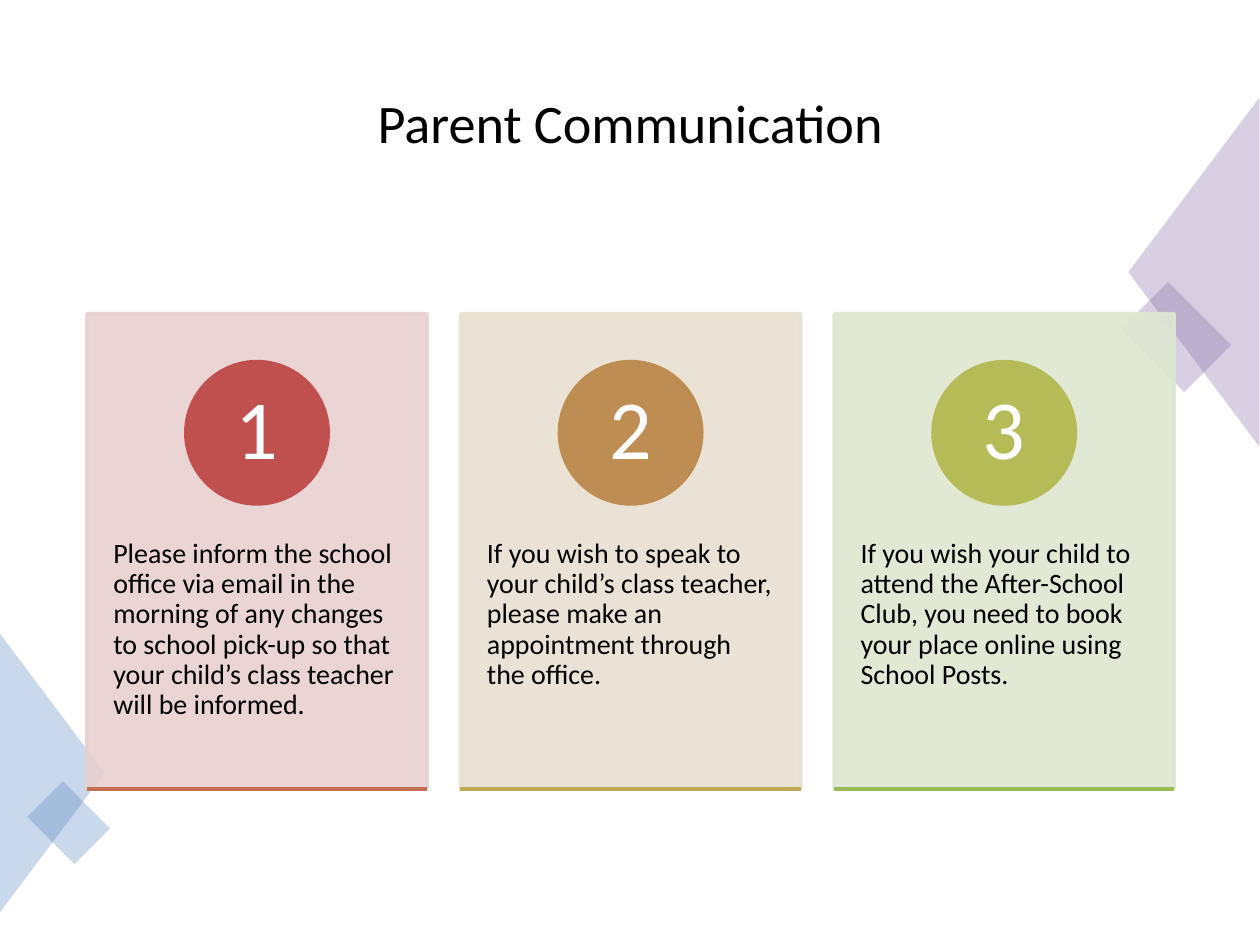
from dataclasses import dataclass

from lxml.etree import SubElement
from pptx import Presentation
from pptx.dml.color import RGBColor
from pptx.enum.shapes import MSO_CONNECTOR, MSO_SHAPE
from pptx.enum.text import MSO_ANCHOR, PP_ALIGN
from pptx.oxml.ns import qn
from pptx.util import Inches, Pt


@dataclass(frozen=True)
class Decoration:
    """A translucent rotated shape at the edge of the page."""
    kind: MSO_SHAPE
    box: tuple[float, float, float, float]
    rotation: float
    color: str


@dataclass(frozen=True)
class Card:
    """A numbered message with its three colours."""
    message: str
    panel: str
    accent: str
    base: str


DECORATIONS = [
    Decoration(MSO_SHAPE.RECTANGLE, (8.98, 2.41, 0.71, 0.53), 45, "8064A2"),
    Decoration(MSO_SHAPE.ISOSCELES_TRIANGLE, (8.09, 1.64, 2.77, 1.04), 270, "8064A2"),
    Decoration(MSO_SHAPE.ISOSCELES_TRIANGLE, (-0.69, 5.72, 2.21, 0.83), 90, "4F81BD"),
    Decoration(MSO_SHAPE.RECTANGLE, (0.28, 6.33, 0.53, 0.4), 45, "4F81BD"),
]
CARDS = [
    Card("Please inform the school office via email in the morning of any changes to "
         "school pick-up so that your child’s class teacher will be informed.",
         "E8D0D0", "C0504D", "BF6F4F"),
    Card("If you wish to speak to your child’s class teacher, please make an "
         "appointment through the office.", "E8E1D1", "BE8D52", "BDA954"),
    Card("If you wish your child to attend the After-School Club, you need to book "
         "your place online using School Posts.", "DEE7D1", "B5BC57", "9BBB59"),
]
CARD_LEFT, CARD_TOP, CARD_WIDTH, CARD_HEIGHT = 0.69, 2.49, 2.7, 3.77
CARD_STEP = 2.965
CIRCLE_SIZE, NUMBER_SIZE = 1.13, 0.8


def paint(color_format, color: str, opacity: int = 100) -> None:
    """Set a solid fill's hex colour and its opacity in percent."""
    color_format.solid()
    color_format.fore_color.rgb = RGBColor.from_string(color)
    if opacity < 100:
        node = color_format._xPr.find(qn("a:solidFill"))[0]
        SubElement(node, qn("a:alpha"), val=str(opacity * 1000))


def add_block(page, kind, box, color: str, *, opacity: int = 100,
              rotation: float = 0, outlined: bool = True) -> None:
    """Draw a filled shape with an optional outline of the same colour."""
    shape = page.shapes.add_shape(kind, *map(Inches, box))
    shape.shadow.inherit = False
    shape.rotation = rotation
    paint(shape.fill, color, opacity)
    if outlined:
        shape.line.width = Pt(2)
        paint(shape.line.fill, color, opacity)
    else:
        shape.line.fill.background()


def add_text(page, text: str, box, *, size: float, color: str = "000000",
             align=PP_ALIGN.CENTER, anchor=MSO_ANCHOR.MIDDLE,
             insets=(0.1, 0.05), spacing: float = 1) -> None:
    """Place one paragraph in a wrapping text box."""
    frame = page.shapes.add_textbox(*map(Inches, box)).text_frame
    frame.word_wrap = True
    frame.vertical_anchor = anchor
    frame.margin_left = frame.margin_right = Inches(insets[0])
    frame.margin_top = frame.margin_bottom = Inches(insets[1])
    para = frame.paragraphs[0]
    para.alignment = align
    para.line_spacing = spacing
    span = para.add_run()
    span.text = text
    span.font.name = "Calibri"
    span.font.size = Pt(size)
    paint(span.font.fill, color)


def add_rule(page, left: float, top: float, width: float, color: str) -> None:
    """Draw a horizontal line without a shadow."""
    rule = page.shapes.add_connector(MSO_CONNECTOR.STRAIGHT, Inches(left), Inches(top),
                                     Inches(left + width), Inches(top))
    rule.line.width = Pt(2)
    paint(rule.line.fill, color)
    SubElement(rule._element.spPr, qn("a:effectLst"))


def add_card(page, number: int, card: Card) -> None:
    """Draw a panel with its message, numbered circle and base line."""
    left = CARD_LEFT + (number - 1) * CARD_STEP
    center = left + CARD_WIDTH / 2
    add_block(page, MSO_SHAPE.RECTANGLE, (left, CARD_TOP, CARD_WIDTH, CARD_HEIGHT),
              card.panel, opacity=90)
    add_text(page, card.message, (left, 3.92, CARD_WIDTH, 2.26), size=16,
             align=PP_ALIGN.LEFT, anchor=MSO_ANCHOR.TOP, insets=(0.21, 0.36), spacing=0.9)
    add_block(page, MSO_SHAPE.OVAL,
              (center - CIRCLE_SIZE / 2, 2.87, CIRCLE_SIZE, CIRCLE_SIZE), card.accent)
    add_text(page, str(number),
             (center - NUMBER_SIZE / 2, 3.03, NUMBER_SIZE, NUMBER_SIZE), size=48,
             color="FFFFFF", insets=(0.09, 0.01), spacing=0.9)
    add_rule(page, left, CARD_TOP + CARD_HEIGHT, CARD_WIDTH, card.base)


def main() -> None:
    """Build and save the deck."""
    deck = Presentation()
    deck.slide_width, deck.slide_height = Inches(10), Inches(7.5)
    page = deck.slides.add_slide(deck.slide_layouts[6])
    add_text(page, "Parent Communication", (0.53, 0.35, 8.94, 1.24), size=31)
    for item in DECORATIONS:
        add_block(page, item.kind, item.box, item.color, opacity=30,
                  rotation=item.rotation, outlined=False)
    for number, card in enumerate(CARDS, start=1):
        add_card(page, number, card)
    deck.save("out.pptx")


if __name__ == "__main__":
    main()
